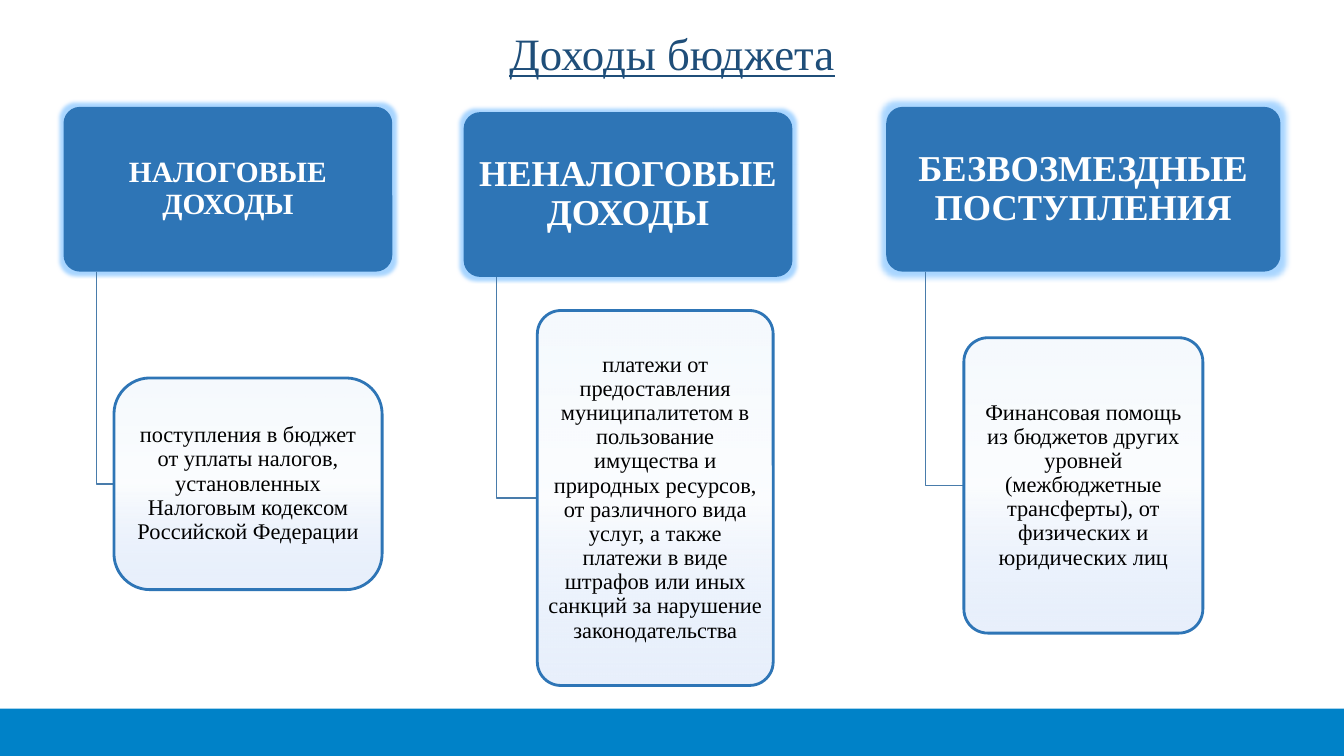
from dataclasses import dataclass
from typing import NamedTuple

from lxml.etree import SubElement
from pptx import Presentation
from pptx.dml.color import RGBColor
from pptx.enum.shapes import MSO_SHAPE
from pptx.enum.text import MSO_ANCHOR, MSO_AUTO_SIZE, PP_ALIGN
from pptx.oxml.ns import qn
from pptx.util import Emu, Inches, Pt


@dataclass(frozen=True)
class Theme:
    font: str = "Times New Roman"
    title: str = "1F4E79"
    accent: str = "2E75B6"
    branch: str = "497CAB"
    footer: str = "0082C8"
    glow: str = "8CC8FF"
    light: str = "FFFFFF"
    dark: str = "000000"
    # position, colour and opacity, all shares in percent
    pale_stops: tuple = ((7, "9AC3F5", 9), (50, "C2D8F8", 6), (100, "E1EBFB", 74))
    title_size: int = 32
    detail_size: int = 16


class Area(NamedTuple):
    """Left, top, width and height in percent of the slide."""
    left: float
    top: float
    width: float
    height: float


@dataclass(frozen=True)
class Income:
    heading: str
    heading_size: int
    heading_area: Area
    glow_points: int
    detail: str
    detail_area: Area
    detail_rounding: float = 0.1


THEME = Theme()
HEADING_HEIGHT = 21.8
INCOMES = (
    Income("НАЛОГОВЫЕ ДОХОДЫ", 21, Area(4.73, 14.13, 24.46, HEADING_HEIGHT), 5,
           "поступления в бюджет от уплаты налогов, установленных "
           "Налоговым кодексом Российской Федерации",
           Area(8.48, 50, 19.95, 28), 0.17),
    Income("НЕНАЛОГОВЫЕ ДОХОДЫ", 26, Area(34.5, 14.83, 24.46, HEADING_HEIGHT), 5,
           "платежи от предоставления муниципалитетом в пользование имущества и "
           "природных ресурсов, от различного вида услуг, а также платежи в виде "
           "штрафов или иных санкций за нарушение законодательства",
           Area(39.98, 41.07, 17.55, 49.6)),
    Income("БЕЗВОЗМЕЗДНЫЕ ПОСТУПЛЕНИЯ", 26, Area(65.94, 14.13, 29.33, HEADING_HEIGHT), 8,
           "Финансовая помощь из бюджетов других уровней (межбюджетные "
           "трансферты), от физических и юридических лиц",
           Area(71.72, 44.67, 17.78, 39.07)),
)

deck = Presentation()
deck.slide_width, deck.slide_height = Inches(13.33), Inches(7.5)
slide = deck.slides.add_slide(deck.slide_layouts[5])


def across(share: float) -> Emu:
    return Emu(int(deck.slide_width * share / 100))


def down(share: float) -> Emu:
    return Emu(int(deck.slide_height * share / 100))


def place(area: Area) -> tuple:
    return across(area.left), down(area.top), across(area.width), down(area.height)


def write(shape, text: str, *, size: int, color: str, bold: bool = False,
          underline: bool = False, anchor=MSO_ANCHOR.MIDDLE,
          spacing: float = 0.9, margin: float = 0.04) -> None:
    frame = shape.text_frame
    frame.word_wrap = True
    frame.auto_size = MSO_AUTO_SIZE.NONE
    frame.vertical_anchor = anchor
    frame.margin_left = frame.margin_right = Inches(margin)
    frame.margin_top = frame.margin_bottom = Inches(margin)
    paragraph = frame.paragraphs[0]
    paragraph.alignment = PP_ALIGN.CENTER
    paragraph.line_spacing = spacing
    run = paragraph.add_run()
    run.text = text
    run.font.name = THEME.font
    run.font.size = Pt(size)
    run.font.bold = bold
    run.font.underline = underline
    run.font.color.rgb = RGBColor.from_string(color)


def add_block(area: Area, color: str, preset=MSO_SHAPE.ROUNDED_RECTANGLE):
    block = slide.shapes.add_shape(preset, *place(area))
    block.shadow.inherit = False
    block.fill.solid()
    block.fill.fore_color.rgb = RGBColor.from_string(color)
    block.line.fill.background()
    return block


def add_color(parent, color: str, opacity: int) -> None:
    tint = SubElement(parent, qn("a:srgbClr"), val=color)
    SubElement(tint, qn("a:alpha"), val=str(opacity * 1000))


def add_heading(income: Income) -> None:
    heading = add_block(income.heading_area, THEME.accent)
    heading.adjustments[0] = 0.1
    effects = heading._element.spPr.find(qn("a:effectLst"))
    glow = SubElement(effects, qn("a:glow"), rad=str(Pt(income.glow_points)))
    add_color(glow, THEME.glow, 75)
    write(heading, income.heading, size=income.heading_size, color=THEME.light, bold=True)


def add_branch(income: Income) -> None:
    """Runs from a tenth of the heading's width to the middle of the detail's side."""
    head, detail = income.heading_area, income.detail_area
    stem = across(head.left + head.width / 10)
    middle = down(detail.top + detail.height / 2)
    outline = slide.shapes.build_freeform(stem, down(head.top + head.height))
    outline.add_line_segments([(stem, middle), (across(detail.left), middle)], close=False)
    branch = outline.convert_to_shape()
    branch.shadow.inherit = False
    branch.fill.background()
    branch.line.color.rgb = RGBColor.from_string(THEME.branch)
    branch.line.width = Pt(1)


def add_detail(income: Income) -> None:
    detail = add_block(income.detail_area, THEME.light)
    detail.adjustments[0] = income.detail_rounding
    detail.line.color.rgb = RGBColor.from_string(THEME.accent)
    detail.line.width = Pt(2)
    detail.fill.gradient()
    detail.fill.gradient_angle = 270
    stops = detail._element.spPr.find(qn("a:gradFill")).find(qn("a:gsLst"))
    for stop in list(stops):
        stops.remove(stop)
    for position, color, opacity in THEME.pale_stops:
        add_color(SubElement(stops, qn("a:gs"), pos=str(position * 1000)), color, opacity)
    write(detail, income.detail, size=THEME.detail_size, color=THEME.dark, margin=0.03)


def main() -> None:
    # Footer band
    add_block(Area(0, 93.73, 100, 6.27), THEME.footer, MSO_SHAPE.RECTANGLE)

    # Title
    title = slide.shapes.title
    title.left, title.top, title.width, title.height = place(Area(14.33, 2.8, 71.34, 8.53))
    write(title, "Доходы бюджета", size=THEME.title_size, color=THEME.title,
          underline=True, anchor=MSO_ANCHOR.TOP, spacing=1.0, margin=0.05)

    # Kinds of income
    for income in INCOMES:
        add_heading(income)
        add_branch(income)
        add_detail(income)

    deck.save("out.pptx")


if __name__ == "__main__":
    main()
